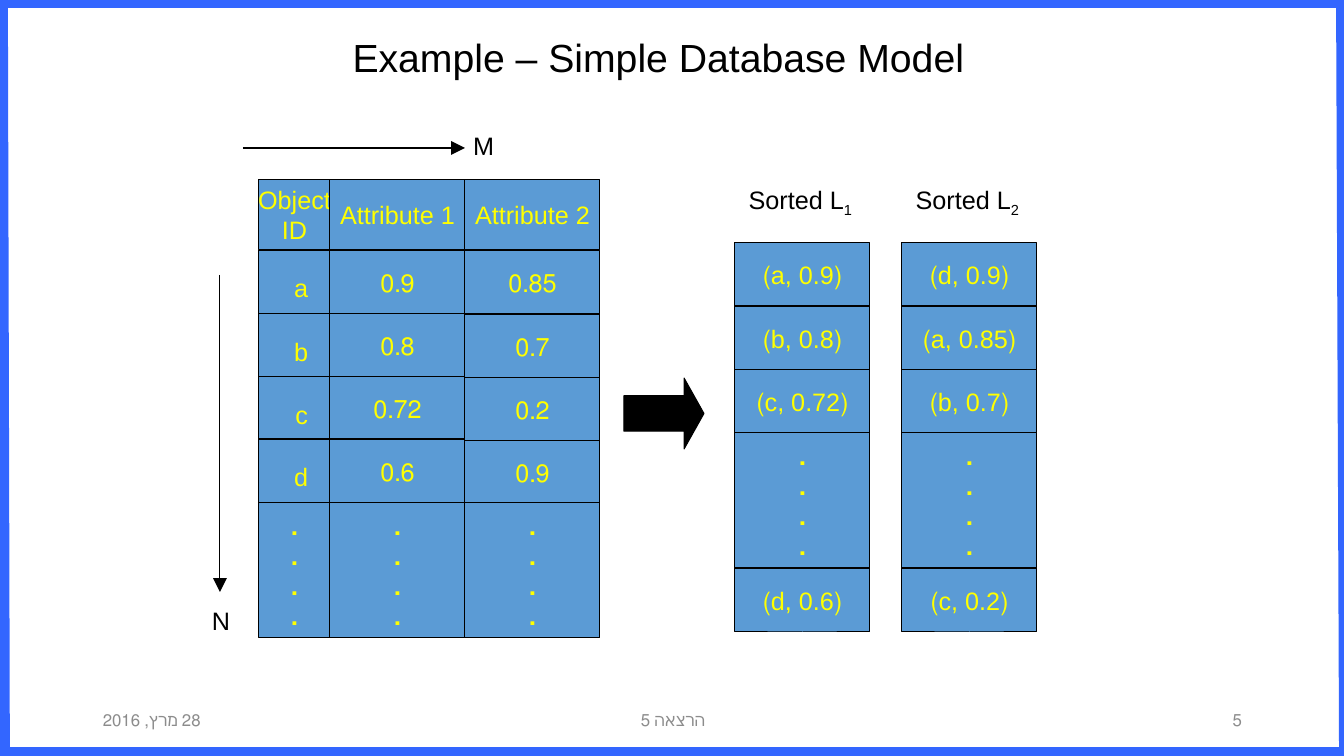
from dataclasses import dataclass
from itertools import accumulate

from lxml.etree import SubElement
from pptx import Presentation
from pptx.dml.color import RGBColor
from pptx.enum.shapes import MSO_CONNECTOR, MSO_SHAPE
from pptx.enum.text import MSO_ANCHOR, MSO_AUTO_SIZE, PP_ALIGN
from pptx.oxml.ns import qn
from pptx.shapes.autoshape import Shape
from pptx.slide import Slide
from pptx.text.text import TextFrame
from pptx.util import Emu, Pt

BLACK = RGBColor(0x00, 0x00, 0x00)
YELLOW = RGBColor(0xFF, 0xFF, 0x00)
CELL_BLUE = RGBColor(0x5B, 0x9B, 0xD5)
FRAME_BLUE = RGBColor(0x33, 0x66, 0xFF)
FOOTER_GRAY = RGBColor(0x8C, 0x8C, 0x8C)

WIDTH, HEIGHT = 1344, 756
EMU_PER_PX = 12192000 / WIDTH
DOTS = "\n".join("." * 4)
LABEL_HEIGHT = 40


@dataclass(frozen=True)
class Column:
    left: int
    top: int
    width: int
    heights: tuple[int, ...]
    entries: tuple[str, ...]


@dataclass(frozen=True)
class Line:
    start: tuple[int, int]
    end: tuple[int, int]
    color: RGBColor = BLACK
    weight: float = 0.75
    arrow: bool = False


@dataclass(frozen=True)
class Label:
    left: int
    top: int
    width: int
    text: str
    subscript: str = ""
    color: RGBColor = BLACK


@dataclass(frozen=True)
class Footer:
    left: int
    width: int
    text: str
    align: PP_ALIGN


GRID_TOP, LIST_TOP = 179, 243
ID_ROWS = (71, 64, 63, 62, 64, 135)
ATTRIBUTE_2_ROWS = (71, 64, 64, 63, 62, 135)
LIST_ROWS = (63, 64, 63, 135, 64)
OBJECT_IDS = ("a", "b", "c", "d")

COLUMNS = (
    Column(735, LIST_TOP, 135, LIST_ROWS,
           ("(a, 0.9)", "(b, 0.8)", "(c, 0.72)", DOTS, "(d, 0.6)")),
    Column(902, LIST_TOP, 135, LIST_ROWS,
           ("(d, 0.9)", "(a, 0.85)", "(b, 0.7)", DOTS, "(c, 0.2)")),
    Column(259, GRID_TOP, 71, ID_ROWS, ("Object\nID", "", "", "", "", DOTS)),
    Column(330, GRID_TOP, 135, ID_ROWS,
           ("Attribute 1", "0.9", "0.8", "0.72", "0.6", DOTS)),
    Column(465, GRID_TOP, 135, ATTRIBUTE_2_ROWS,
           ("Attribute 2", "0.85", "0.7", "0.2", "0.9", DOTS)),
)
FRAME = (
    Line((WIDTH, 3), (0, 3), FRAME_BLUE, 7),
    Line((1341, 0), (WIDTH, HEIGHT), FRAME_BLUE, 7),
    Line((3, 0), (5, HEIGHT), FRAME_BLUE, 7),
    Line((1342, 752), (3, 752), FRAME_BLUE, 7),
)
AXES = (
    Line((220, 275), (220, 592), arrow=True),
    Line((243, 148), (465, 148), arrow=True),
)
LABELS = (
    Label(201, 600, 39, "N"),
    Label(465, 125, 39, "M"),
    Label(735, 179, 127, "Sorted L", "1"),
    Label(902, 179, 127, "Sorted L", "2"),
)
FOOTERS = (
    Footer(93, 302, "28 מרץ, 2016", PP_ALIGN.LEFT),
    Footer(446, 454, "הרצאה 5", PP_ALIGN.CENTER),
    Footer(950, 302, "5", PP_ALIGN.RIGHT),
)


def px(length: int) -> Emu:
    return Emu(round(length * EMU_PER_PX))


def format_text(frame: TextFrame, size: int, color: RGBColor, align: PP_ALIGN,
                font: str = "Arial", bold: bool = False) -> None:
    """Format every paragraph alike, with right-to-left direction."""
    for para in frame.paragraphs:
        para.alignment = align
        para._p.get_or_add_pPr().set("rtl", "1")
        para.font.name = font
        para.font.size = Pt(size)
        para.font.bold = bold
        para.font.color.rgb = color


def draw_line(page: Slide, line: Line) -> None:
    connector = page.shapes.add_connector(
        MSO_CONNECTOR.STRAIGHT, *map(px, line.start + line.end))
    connector.line.color.rgb = line.color
    connector.line.width = Pt(line.weight)
    properties = connector._element.spPr
    if line.arrow:
        SubElement(properties.find(qn("a:ln")), qn("a:tailEnd"),
                   type="triangle", w="lg", len="lg")
    SubElement(properties, qn("a:effectLst"))


def draw_shape(page: Slide, kind: MSO_SHAPE, left: int, top: int,
               width: int, height: int, fill: RGBColor) -> Shape:
    shape = page.shapes.add_shape(kind, px(left), px(top), px(width), px(height))
    shape.shadow.inherit = False
    shape.fill.solid()
    shape.fill.fore_color.rgb = fill
    shape.line.color.rgb = BLACK
    shape.line.width = Pt(0.75)
    return shape


def draw_column(page: Slide, column: Column) -> None:
    tops = accumulate(column.heights, initial=column.top)
    for top, height, entry in zip(tops, column.heights, column.entries):
        cell = draw_shape(page, MSO_SHAPE.RECTANGLE, column.left, top,
                          column.width, height, CELL_BLUE)
        if entry:
            frame = cell.text_frame
            frame.text = entry
            frame.word_wrap = False
            frame.vertical_anchor = MSO_ANCHOR.MIDDLE
            format_text(frame, 18, YELLOW, PP_ALIGN.CENTER, bold=entry == DOTS)


def draw_label(page: Slide, label: Label) -> None:
    box = page.shapes.add_textbox(
        px(label.left), px(label.top), px(label.width), px(LABEL_HEIGHT))
    frame = box.text_frame
    frame.word_wrap = True
    frame.auto_size = MSO_AUTO_SIZE.SHAPE_TO_FIT_TEXT
    frame.text = label.text
    if label.subscript:
        span = frame.paragraphs[0].add_run()
        span.text = label.subscript
        span._r.get_or_add_rPr().set("baseline", "-25000")
    format_text(frame, 18, label.color, PP_ALIGN.RIGHT)


def draw_footer(page: Slide, footer: Footer) -> None:
    box = page.shapes.add_textbox(px(footer.left), px(700), px(footer.width), px(40))
    frame = box.text_frame
    frame.word_wrap = True
    frame.vertical_anchor = MSO_ANCHOR.MIDDLE
    frame.text = footer.text
    format_text(frame, 12, FOOTER_GRAY, footer.align, "Calibri")


def place_title(page: Slide) -> None:
    title = page.shapes.title
    title.left, title.top, title.width, title.height = map(px, (259, 28, 715, 57))
    frame = title.text_frame
    frame.text = "Example – Simple Database Model"
    frame.word_wrap = True
    frame.auto_size = MSO_AUTO_SIZE.NONE
    frame.vertical_anchor = MSO_ANCHOR.TOP
    format_text(frame, 28, BLACK, PP_ALIGN.RIGHT)


def main() -> None:
    deck = Presentation()
    deck.slide_width, deck.slide_height = px(WIDTH), px(HEIGHT)
    page = deck.slides.add_slide(deck.slide_layouts.get_by_name("Title Only"))
    place_title(page)
    for line in FRAME:
        draw_line(page, line)
    block_arrow = draw_shape(page, MSO_SHAPE.RIGHT_ARROW, 624, 378, 80, 71, BLACK)
    block_arrow.adjustments[1] = 0.28
    for column in COLUMNS:
        draw_column(page, column)
    id_tops = list(accumulate(ID_ROWS, initial=GRID_TOP))[1:]
    for top, object_id in zip(id_tops, OBJECT_IDS):
        draw_label(page, Label(272, top + 17, 46, object_id, color=YELLOW))
    for line in AXES:
        draw_line(page, line)
    for label in LABELS:
        draw_label(page, label)
    for footer in FOOTERS:
        draw_footer(page, footer)
    deck.save("out.pptx")


if __name__ == "__main__":
    main()
